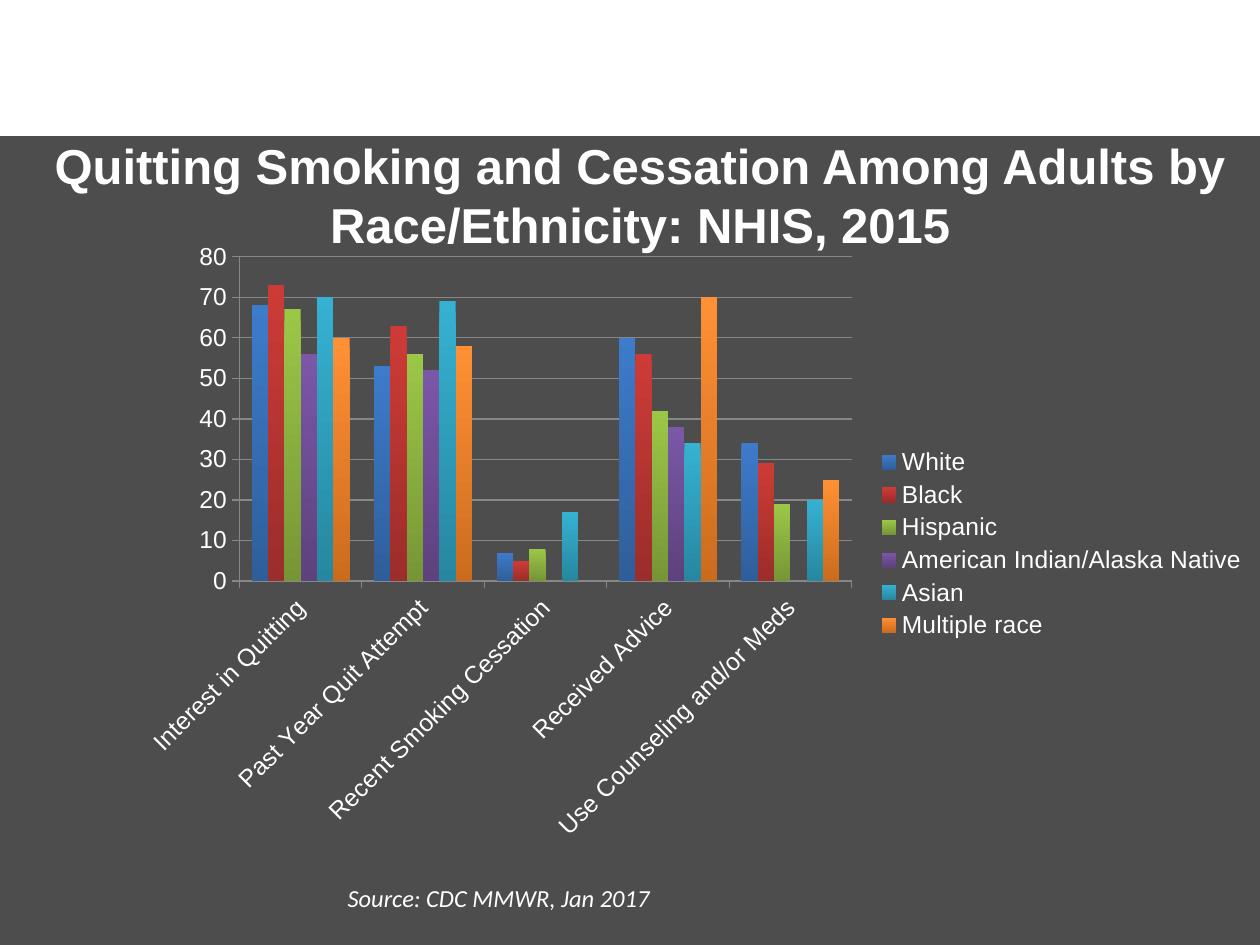
from lxml import etree
from pptx import Presentation
from pptx.chart.data import CategoryChartData
from pptx.dml.color import RGBColor
from pptx.enum.chart import XL_CHART_TYPE, XL_LEGEND_POSITION, XL_TICK_MARK
from pptx.enum.shapes import MSO_SHAPE
from pptx.enum.text import MSO_ANCHOR, PP_ALIGN
from pptx.oxml.ns import qn
from pptx.util import Inches, Pt

COLUMNS = XL_CHART_TYPE.COLUMN_CLUSTERED
RIGHT = XL_LEGEND_POSITION.RIGHT
OUTSIDE = XL_TICK_MARK.OUTSIDE
RECTANGLE = MSO_SHAPE.RECTANGLE
MIDDLE, TOP = MSO_ANCHOR.MIDDLE, MSO_ANCHOR.TOP
CENTER, LEFT = PP_ALIGN.CENTER, PP_ALIGN.LEFT

COLORS = {"panel": "4D4D4D", "text": "FFFFFF", "grid": "878787"}


def rgb(name):
    return RGBColor.from_string(COLORS[name])


def set_font(font, **values):
    font.color.rgb = rgb("text")
    for name, value in values.items():
        setattr(font, name, value)


deck = Presentation()
deck.slide_width, deck.slide_height = Inches(10), Inches(7.5)
page = deck.slides.add_slide(deck.slide_layouts[6])

# Dark panel under the white band
panel = page.shapes.add_shape(
    RECTANGLE, Inches(0), Inches(1.08), Inches(10), Inches(6.42))
panel.shadow.inherit = False
panel.fill.solid()
panel.fill.fore_color.rgb = rgb("panel")
panel.line.fill.background()

# Chart data: name, values, top and bottom colour of the columns
categories = ["Interest in Quitting", "Past Year Quit Attempt",
              "Recent Smoking Cessation", "Received Advice",
              "Use Counseling and/or Meds"]
groups = [
    ("White", [68, 53, 7, 60, 34], "3D7BCB", "2F5F9A"),
    ("Black", [73, 63, 5, 56, 29], "CE3B37", "9B2D2A"),
    ("Hispanic", [67, 56, 8, 42, 19], "9BC747", "769636"),
    ("American Indian/Alaska Native", [56, 52, None, 38, None],
     "7B57A8", "5D427D"),
    ("Asian", [70, 69, 17, 34, 20], "36B1D2", "2787A0"),
    ("Multiple race", [60, 58, None, 70, 25], "FF9035", "CB6C1D"),
]
data = CategoryChartData()
data.categories = categories
for name, values, *shades in groups:
    data.add_series(name, values)

# Column chart
chart = page.shapes.add_chart(
    COLUMNS, Inches(1), Inches(1.84), Inches(9), Inches(4.95), data).chart
chart.has_title = False
set_font(chart.font, name="Arial", size=Pt(14))
chart.has_legend = True
chart.legend.position = RIGHT
chart.legend.include_in_layout = False
set_font(chart.legend.font, name="Arial", size=Pt(14))

plot = chart.plots[0]
plot.gap_width, plot.overlap = 150, 0
plot.vary_by_categories = False
for series, (name, values, *shades) in zip(plot.series, groups):
    fill = series.format.fill
    fill.gradient()
    fill.gradient_angle = 270
    for stop, shade in zip(fill.gradient_stops, shades):
        stop.color.rgb = RGBColor.from_string(shade)

# Axes
category_axis, value_axis = chart.category_axis, chart.value_axis
for axis in (category_axis, value_axis):
    axis.major_tick_mark = OUTSIDE
    axis.format.line.color.rgb = rgb("grid")
    set_font(axis.tick_labels.font, name="Arial", size=Pt(14))
value_axis.minimum_scale, value_axis.maximum_scale = 0, 80
value_axis.major_unit = 10
value_axis.has_major_gridlines = True
value_axis.major_gridlines.format.line.color.rgb = rgb("grid")

# Slanted category labels and fixed plot area
label_body = category_axis._element.find(qn("c:txPr")).find(qn("a:bodyPr"))
label_body.set("rot", "-2700000")
plot_area = chart._chartSpace.chart.plotArea
layout = plot_area.find(qn("c:layout"))
if layout is None:
    layout = etree.Element(qn("c:layout"))
    plot_area.insert(0, layout)
manual = etree.SubElement(layout, qn("c:manualLayout"))
for tag, value in [("layoutTarget", "inner"), ("xMode", "edge"),
                   ("yMode", "edge"), ("x", "0.1"), ("y", "0.04"),
                   ("w", "0.54"), ("h", "0.52")]:
    etree.SubElement(manual, qn("c:" + tag)).set("val", value)

# Title and source line
texts = [
    ("Quitting Smoking and Cessation Among Adults by Race/Ethnicity: "
     "NHIS, 2015", (0.33, 0.92, 9.5, 1.25), True, MIDDLE, CENTER,
     {"name": "Arial", "size": Pt(28), "bold": True}),
    ("Source: CDC MMWR, Jan 2017", (2.66, 6.96, 2.62, 0.34), False, TOP, LEFT,
     {"name": "Calibri", "size": Pt(14), "italic": True}),
]
for text, place, wrap, anchor, alignment, font_values in texts:
    box = page.shapes.add_textbox(*[Inches(length) for length in place])
    box.text_frame.word_wrap = wrap
    box.text_frame.vertical_anchor = anchor
    para = box.text_frame.paragraphs[0]
    para.alignment = alignment
    span = para.add_run()
    span.text = text
    set_font(span.font, **font_values)

deck.save("out.pptx")
